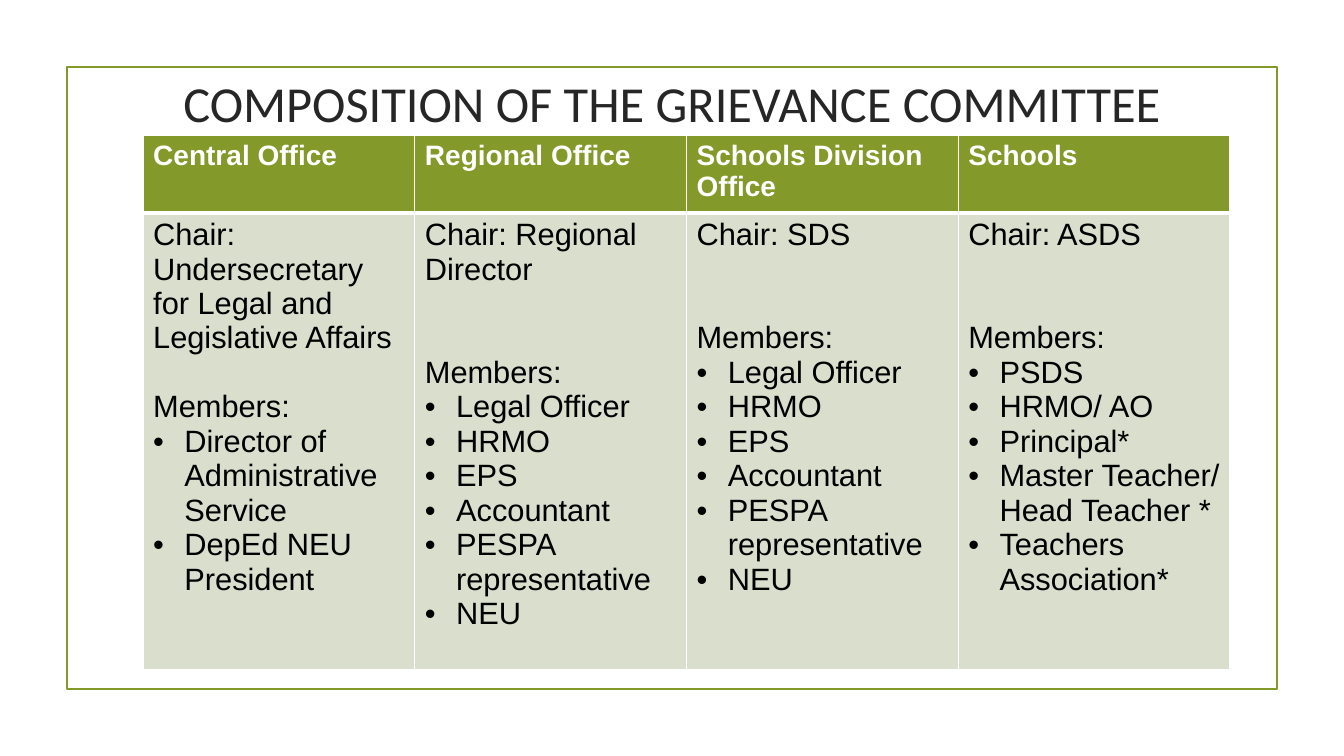
"""Build a slide showing the composition of the grievance committee at each office level."""
import lxml.etree
import pptx
import pptx.dml.color
import pptx.enum.shapes
import pptx.enum.text
import pptx.oxml.ns
import pptx.util

THEME = {
    "green": "83992A", "sage": "D9DECD", "white": "FFFFFF", "black": "000000", "charcoal": "262626",
    "title_font": "Calibri", "table_font": "Arial",
    "title_size": 36, "header_size": 20, "body_size": 22, "line_pitch": 24.6,
    "frame_line": 1.25, "thin_border": 1, "thick_border": 3,
}

OFFICES = [
    ("Central Office", "Chair: Undersecretary for Legal and Legislative Affairs", 1,
     ["Director of Administrative Service", "DepEd NEU President"]),
    ("Regional Office", "Chair: Regional Director", 2,
     ["Legal Officer", "HRMO", "EPS", "Accountant", "PESPA representative", "NEU"]),
    ("Schools Division Office", "Chair: SDS", 2,
     ["Legal Officer", "HRMO", "EPS", "Accountant", "PESPA representative", "NEU"]),
    ("Schools", "Chair: ASDS", 2,
     ["PSDS", "HRMO/ AO", "Principal*", "Master Teacher/ Head Teacher *", "Teachers Association*"]),
]


def style_runs(paragraph, font, size, color, bold=False):
    """Apply one type style to every run of a paragraph."""
    for run in paragraph.runs:
        run.font.name = THEME[font]
        run.font.size = pptx.util.Pt(THEME[size])
        run.font.bold = bold
        run.font.color.rgb = pptx.dml.color.RGBColor.from_string(THEME[color])


def paint_cell(cell, fill, thick_side):
    """Give a cell white borders, one of them thick, and a solid fill."""
    properties = cell._tc.get_or_add_tcPr()
    for side in ("lnL", "lnR", "lnT", "lnB"):
        weight = THEME["thick_border" if side == thick_side else "thin_border"]
        border = lxml.etree.SubElement(properties, pptx.oxml.ns.qn(f"a:{side}"), w=str(pptx.util.Pt(weight)))
        solid = lxml.etree.SubElement(border, pptx.oxml.ns.qn("a:solidFill"))
        lxml.etree.SubElement(solid, pptx.oxml.ns.qn("a:srgbClr"), val=THEME["white"])
    cell.fill.solid()
    cell.fill.fore_color.rgb = pptx.dml.color.RGBColor.from_string(THEME[fill])


deck = pptx.Presentation()
deck.slide_width = pptx.util.Inches(13.33)
deck.slide_height = pptx.util.Inches(7.5)
width, height = deck.slide_width, deck.slide_height
slide = deck.slides.add_slide(deck.slide_layouts[6])

margin = int(width * 0.05)
frame = slide.shapes.add_shape(
    pptx.enum.shapes.MSO_SHAPE.RECTANGLE, margin, margin, width - 2 * margin, height - 2 * margin)
frame.shadow.inherit = False
frame.fill.background()
frame.line.color.rgb = pptx.dml.color.RGBColor.from_string(THEME["green"])
frame.line.width = pptx.util.Pt(THEME["frame_line"])

title = slide.shapes.add_textbox(
    int(width * 0.1065), int(height * 0.04), int(width * 0.7875), int(height * 0.19))
title.text_frame.word_wrap = True
title.text_frame.vertical_anchor = pptx.enum.text.MSO_ANCHOR.MIDDLE
title.text_frame.text = "COMPOSITION OF THE GRIEVANCE COMMITTEE"
title.text_frame.paragraphs[0].alignment = pptx.enum.text.PP_ALIGN.CENTER
style_runs(title.text_frame.paragraphs[0], "title_font", "title_size", "charcoal")

header_height, body_height = int(height * 0.095), int(height * 0.605)
committee = slide.shapes.add_table(
    2, len(OFFICES), int(width * 0.1065), int(height * 0.179),
    int(width * 0.8087), header_height + body_height).table
committee.rows[0].height = header_height
committee.rows[1].height = body_height

hanging = pptx.util.Inches(0.31)
for column, (office, chair, gap_lines, members) in enumerate(OFFICES):
    header, body = committee.cell(0, column), committee.cell(1, column)
    paint_cell(header, "green", "lnB")
    paint_cell(body, "sage", "lnT")

    header.text_frame.text = office
    style_runs(header.text_frame.paragraphs[0], "table_font", "header_size", "white", bold=True)

    body.text_frame.text = "\n".join([chair, "Members:", *members])
    for position, paragraph in enumerate(body.text_frame.paragraphs):
        if position == 1:
            paragraph.space_before = pptx.util.Pt(round(gap_lines * THEME["line_pitch"], 1))
        if position > 1:
            layout = paragraph._p.get_or_add_pPr()
            layout.set("marL", str(hanging))
            layout.set("indent", str(-hanging))
            lxml.etree.SubElement(layout, pptx.oxml.ns.qn("a:buFont"), typeface=THEME["table_font"])
            lxml.etree.SubElement(layout, pptx.oxml.ns.qn("a:buChar"), char="•")
        style_runs(paragraph, "table_font", "body_size", "black")

deck.save("out.pptx")
